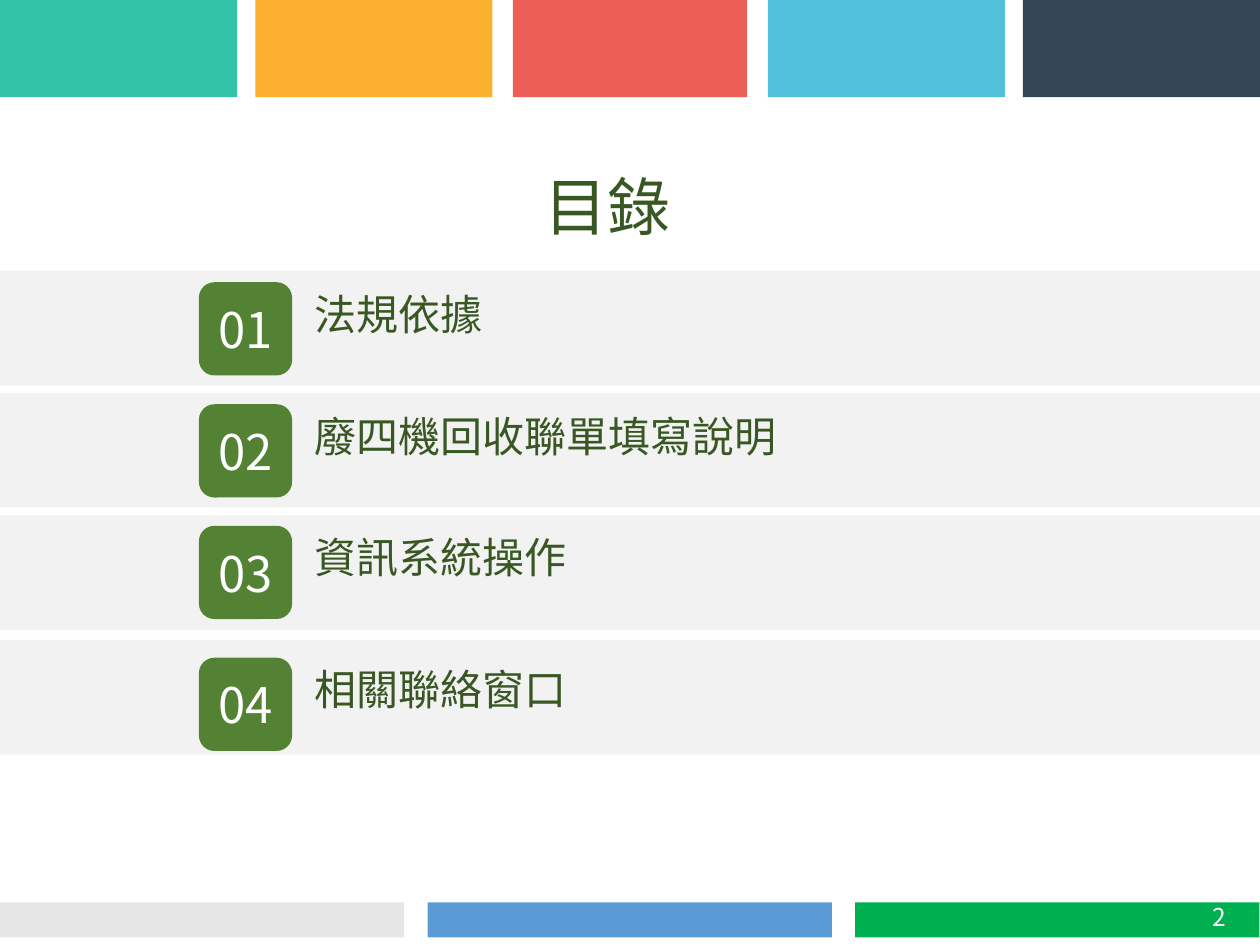
"""Build a table-of-contents slide with coloured bars and four numbered entries."""
from lxml import etree
from pptx import Presentation
from pptx.dml.color import RGBColor
from pptx.enum.shapes import MSO_SHAPE
from pptx.enum.text import MSO_ANCHOR, PP_ALIGN
from pptx.oxml.ns import qn
from pptx.util import Cm, Pt

RECTANGLE = MSO_SHAPE.RECTANGLE
ROUNDED = MSO_SHAPE.ROUNDED_RECTANGLE
TOP, MIDDLE = MSO_ANCHOR.TOP, MSO_ANCHOR.MIDDLE
LEFT, CENTER, RIGHT = PP_ALIGN.LEFT, PP_ALIGN.CENTER, PP_ALIGN.RIGHT

FONT = "Noto Sans CJK SC"
WHITE = RGBColor(0xFF, 0xFF, 0xFF)
LIGHT_GRAY = RGBColor(0xF2, 0xF2, 0xF2)
GRAY = RGBColor(0xE7, 0xE6, 0xE6)
BLUE = RGBColor(0x5B, 0x9B, 0xD5)
BRIGHT_GREEN = RGBColor(0x00, 0xB0, 0x50)
BADGE_GREEN = RGBColor(0x54, 0x82, 0x35)
DARK_GREEN = RGBColor(0x38, 0x57, 0x23)
TEAL = RGBColor(0x33, 0xC3, 0xAB)
ORANGE = RGBColor(0xFC, 0xB0, 0x30)
RED = RGBColor(0xEB, 0x5F, 0x56)
SKY = RGBColor(0x52, 0xC2, 0xDC)
NAVY = RGBColor(0x36, 0x45, 0x55)

SLIDE_WIDTH = 25.4

presentation = Presentation()
presentation.slide_width = Cm(SLIDE_WIDTH)
presentation.slide_height = Cm(19.05)
slide = presentation.slides.add_slide(presentation.slide_layouts[6])


def add_block(kind, left, top, width, height, color):
    shape = slide.shapes.add_shape(kind, Cm(left), Cm(top), Cm(width), Cm(height))
    shape.shadow.inherit = False
    shape.fill.solid()
    shape.fill.fore_color.rgb = color
    shape.line.fill.background()
    return shape


def write_text(shape, text, size, color, alignment, anchor):
    frame = shape.text_frame
    frame.word_wrap = True
    frame.vertical_anchor = anchor
    paragraph = frame.paragraphs[0]
    paragraph.alignment = alignment
    run = paragraph.add_run()
    run.text = text
    run.font.size = Pt(size)
    run.font.name = FONT
    run.font.color.rgb = color
    etree.SubElement(run.font._element, qn("a:ea"), typeface=FONT)


for index, color in enumerate([GRAY, BLUE, BRIGHT_GREEN]):
    add_block(RECTANGLE, index * 8.62, 18.19, 8.15, 0.71, color)

header_bars = [
    (0, 4.78, TEAL),
    (5.15, 4.78, ORANGE),
    (10.34, 4.72, RED),
    (15.48, 4.78, SKY),
    (20.62, 4.78, NAVY),
]
for left, width, color in header_bars:
    add_block(RECTANGLE, left, 0, width, 1.96, color)

entries = [
    ("法規依據", 5.46, 5.69, 6.55),
    ("廢四機回收聯單填寫說明", 7.92, 8.15, 14.53),
    ("資訊系統操作", 10.39, 10.6, 6.55),
    ("相關聯絡窗口", 12.9, 13.26, 6.55),
]
for number, (entry, band_top, badge_top, text_width) in enumerate(entries, start=1):
    add_block(RECTANGLE, 0, band_top, SLIDE_WIDTH, 2.31, LIGHT_GRAY)
    badge = add_block(ROUNDED, 4.01, badge_top, 1.88, 1.88, BADGE_GREEN)
    write_text(badge, f"{number:02d}", 28, WHITE, CENTER, MIDDLE)
    label = slide.shapes.add_textbox(Cm(6.1), Cm(badge_top), Cm(text_width), Cm(1.27))
    write_text(label, entry, 24, DARK_GREEN, LEFT, TOP)

title = slide.shapes.add_textbox(Cm(7.52), Cm(2.9), Cm(9.45), Cm(2.46))
write_text(title, "目錄", 36, DARK_GREEN, CENTER, MIDDLE)

page_number = slide.shapes.add_textbox(Cm(19.25), Cm(17.96), Cm(5.72), Cm(1.02))
write_text(page_number, "2", 14, WHITE, RIGHT, MIDDLE)

presentation.save("out.pptx")
